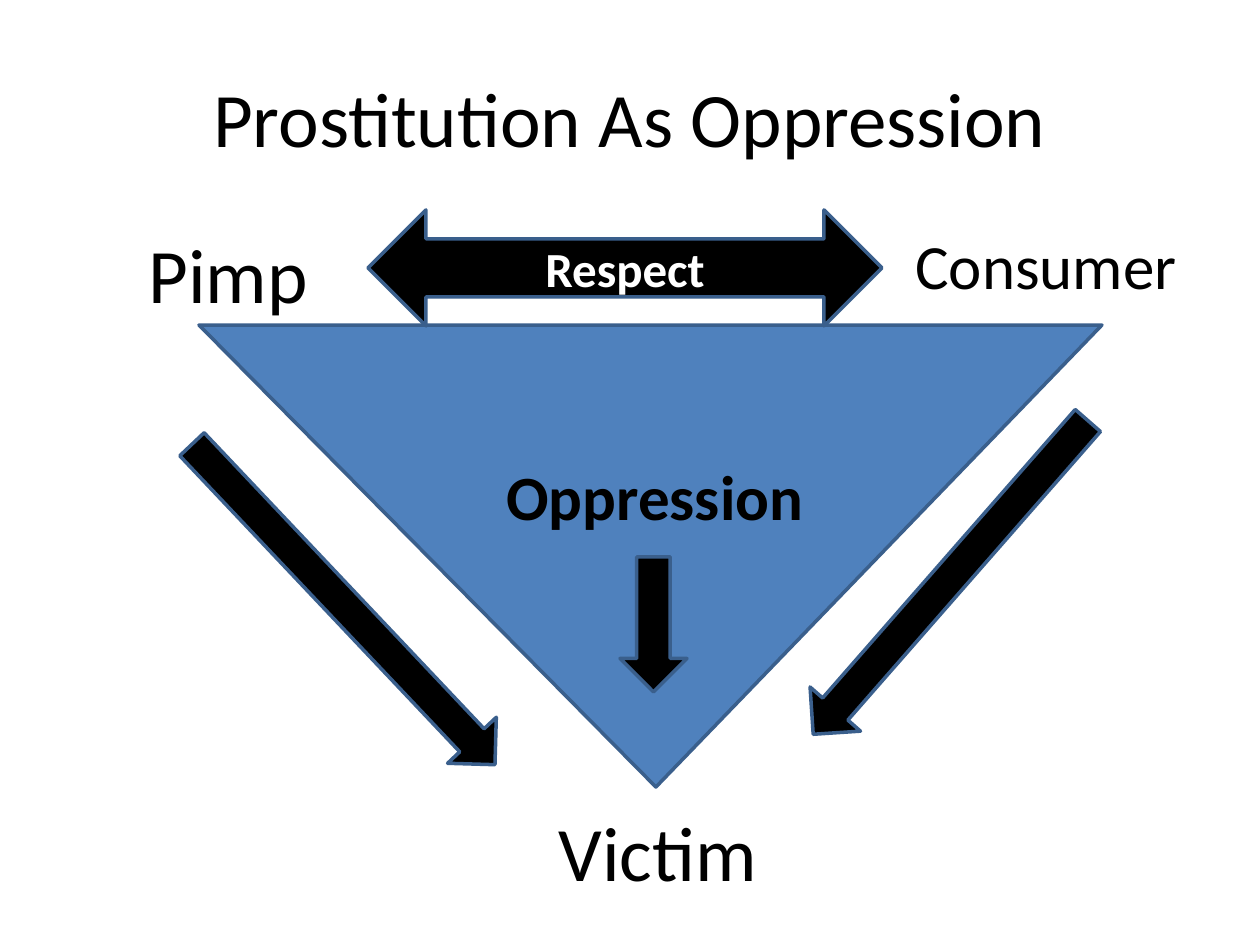
from pptx import Presentation
from pptx.dml.color import RGBColor
from pptx.enum.shapes import MSO_SHAPE
from pptx.enum.text import MSO_ANCHOR, PP_ALIGN
from pptx.util import Pt

PX = 914400 // 126
SLIDE_W, SLIDE_H = 1260, 945
FONT = "Calibri"

BLACK = RGBColor(0x00, 0x00, 0x00)
WHITE = RGBColor(0xFF, 0xFF, 0xFF)
BLUE = RGBColor(0x4F, 0x81, 0xBD)
OUTLINE = RGBColor(0x3A, 0x5F, 0x8C)

TRIANGLE = MSO_SHAPE.ISOSCELES_TRIANGLE
DOWN = MSO_SHAPE.DOWN_ARROW
LEFT_RIGHT = MSO_SHAPE.LEFT_RIGHT_ARROW
MIDDLE, CENTER = MSO_ANCHOR.MIDDLE, PP_ALIGN.CENTER

TITLE = ("Prostitution As Oppression", (63, 38, 1134, 158), 44)

# text, box, size, bold
LABELS = [
    ("Pimp", (136, 220, 203, 106), 44, False),
    ("Consumer", (903, 220, 319, 89), 36, False),
    ("Victim", (546, 798, 236, 106), 44, False),
    ("Oppression", (494, 451, 379, 89), 36, True),
]

POWER_TRIANGLE = (199, 325, 903, 462)
APEX = 0.494

# box, rotation
DOWN_ARROWS = [
    ((620, 557, 67, 135), 0),
    ((310, 384, 67, 441), 316.6),
    ((917, 369, 67, 417), 41.2),
]

RESPECT = ("Respect", (368, 210, 514, 116), 28)


def emu(box):
    return [v * PX for v in box]


def write(s, text, size, color=BLACK, bold=False, centered=False):
    tf = s.text_frame
    p = tf.paragraphs[0]
    p.text = text
    p.font.name = FONT
    p.font.size = Pt(size)
    p.font.bold = bold
    p.font.color.rgb = color
    if centered:
        tf.word_wrap = True
        tf.vertical_anchor = MIDDLE
        p.alignment = CENTER


def add_outlined(slide, kind, box, fill, rotation=0):
    s = slide.shapes.add_shape(kind, *emu(box))
    s.rotation = rotation
    s.shadow.inherit = False
    s.fill.solid()
    s.fill.fore_color.rgb = fill
    s.line.color.rgb = OUTLINE
    s.line.width = Pt(2)
    return s


def main():
    prs = Presentation()
    prs.slide_width, prs.slide_height = emu((SLIDE_W, SLIDE_H))
    slide = prs.slides.add_slide(prs.slide_layouts[6])

    text, box, size = TITLE
    write(slide.shapes.add_textbox(*emu(box)), text, size, centered=True)

    triangle = add_outlined(slide, TRIANGLE, POWER_TRIANGLE, BLUE, 180)
    triangle.adjustments[0] = APEX

    for text, box, size, bold in LABELS:
        s = slide.shapes.add_textbox(*emu(box))
        s.text_frame.word_wrap = False
        write(s, text, size, bold=bold)

    for box, rotation in DOWN_ARROWS:
        add_outlined(slide, DOWN, box, BLACK, rotation)

    text, box, size = RESPECT
    respect = add_outlined(slide, LEFT_RIGHT, box, BLACK)
    write(respect, text, size, WHITE, bold=True, centered=True)

    prs.save("out.pptx")


if __name__ == "__main__":
    main()
